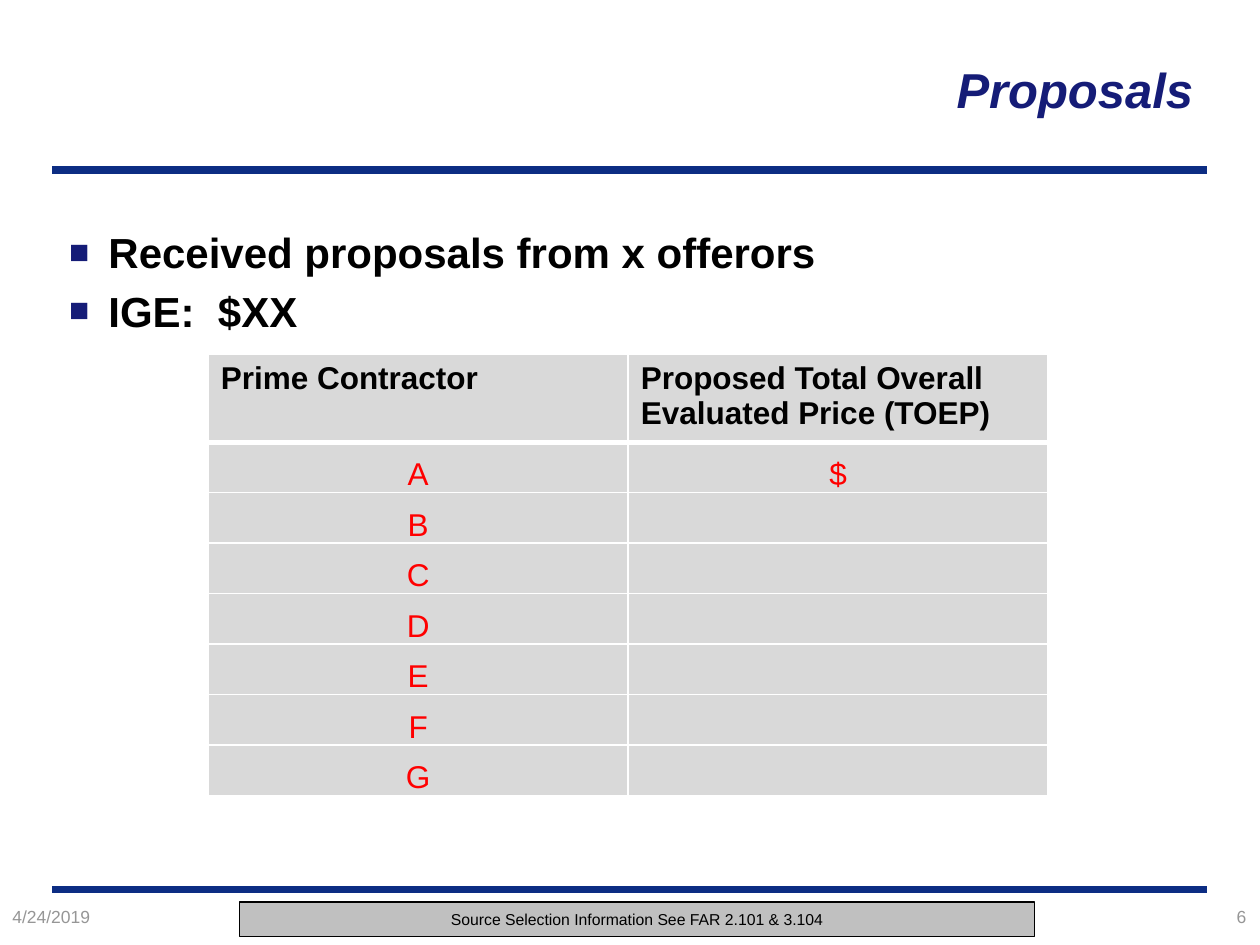
import pptx
import pptx.dml.color
import pptx.enum.shapes
import pptx.enum.text
import pptx.oxml
import pptx.oxml.ns
import pptx.util

Pt = pptx.util.Pt
RGBColor = pptx.dml.color.RGBColor
ALIGN = pptx.enum.text.PP_ALIGN
ANCHOR = pptx.enum.text.MSO_ANCHOR

FONT = "Arial"
NAVY = RGBColor(0x15, 0x1C, 0x77)
BLUE = RGBColor(0x0C, 0x2D, 0x83)
BLACK = RGBColor(0, 0, 0)
WHITE = RGBColor(255, 255, 255)
RED = RGBColor(255, 0, 0)
SILVER = RGBColor(0xC0, 0xC0, 0xC0)
PALE = RGBColor(0xD9, 0xD9, 0xD9)
GRAY = RGBColor(0x96, 0x96, 0x96)

HEADS = ("Prime Contractor", "Proposed Total Overall Evaluated Price (TOEP)")
PRICES = {"A": "$", "B": "", "C": "", "D": "", "E": "", "F": "", "G": ""}


def add_xml(parent, text):
    space = pptx.oxml.ns.nsdecls("a")
    parent.append(pptx.oxml.parse_xml(text.replace(">", f" {space}>", 1)))


def style(para, size, color, align=ALIGN.LEFT, bold=False, italic=False):
    para.alignment = align
    for run in para.runs:
        font = run.font
        font.name, font.size = FONT, Pt(size)
        font.bold, font.italic = bold, italic
        font.color.rgb = color


def add_title(slide, text):
    title = slide.shapes.title
    title.left, title.top = Pt(131), Pt(6)
    title.width, title.height = Pt(558), Pt(90)
    frame = title.text_frame
    frame.text = text
    frame.vertical_anchor = ANCHOR.MIDDLE
    style(frame.paragraphs[0], 28, NAVY, ALIGN.RIGHT, bold=True, italic=True)


def add_rule(slide, y):
    rule = slide.shapes.add_connector(
        pptx.enum.shapes.MSO_CONNECTOR.STRAIGHT, Pt(30), Pt(y), Pt(690), Pt(y))
    rule.line.color.rgb = BLUE
    rule.line.width = Pt(4.5)
    add_xml(rule._element.spPr, "<a:effectLst></a:effectLst>")


def add_text(slide, text, left, top, width, height):
    box = slide.shapes.add_textbox(Pt(left), Pt(top), Pt(width), Pt(height))
    frame = box.text_frame
    frame.word_wrap = True
    frame.text = text
    return frame


def add_bullets(slide, lines):
    frame = add_text(slide, "\n".join(lines), 32.4, 121, 653, 340.6)
    frame.margin_top = Pt(8.4)
    for index, para in enumerate(frame.paragraphs):
        props = para._p.get_or_add_pPr()
        props.set("marL", str(Pt(22.5)))
        props.set("indent", str(-Pt(22.5)))
        para.space_before = Pt(4.8 if index else 0)
        add_xml(props, f'<a:buClr><a:srgbClr val="{NAVY}"/></a:buClr>')
        add_xml(props, '<a:buSzPct val="80000"></a:buSzPct>')
        add_xml(props, f'<a:buFont typeface="{FONT}"></a:buFont>')
        add_xml(props, '<a:buChar char="■"></a:buChar>')
        style(para, 24, BLACK, bold=True)


def add_notice(slide, text):
    box = slide.shapes.add_shape(
        pptx.enum.shapes.MSO_SHAPE.RECTANGLE, Pt(136.8), Pt(515.5), Pt(454.3), Pt(19.5))
    box.shadow.inherit = False
    box.fill.solid()
    box.fill.fore_color.rgb = SILVER
    box.line.color.rgb = BLACK
    box.line.width = Pt(0.75)
    frame = box.text_frame
    frame.text = text
    frame.vertical_anchor = ANCHOR.MIDDLE
    style(frame.paragraphs[0], 9, BLACK, ALIGN.CENTER)


def add_edges(cell, head):
    """Draw white borders, heavier wherever the head row meets the body."""
    props = cell._tc.get_or_add_tcPr()
    widths = {"lnL": 1, "lnR": 1, "lnT": 1, "lnB": 3 if head else 1}
    for tag, width in widths.items():
        add_xml(props, f'<a:{tag} w="{Pt(width)}"><a:solidFill>'
                       f'<a:srgbClr val="{WHITE}"/></a:solidFill></a:{tag}>')


def fill_cell(cell, text, head):
    add_edges(cell, head)
    cell.fill.solid()
    cell.fill.fore_color.rgb = PALE
    cell.text = text
    para = cell.text_frame.paragraphs[0]
    if head:
        style(para, 18, BLACK, bold=True)
    elif text:
        cell.vertical_anchor = ANCHOR.BOTTOM
        cell.margin_left = cell.margin_right = cell.margin_top = Pt(0.75)
        cell.margin_bottom = Pt(0)
        style(para, 18, RED, ALIGN.CENTER)


def add_prices(slide):
    rows = [HEADS, *PRICES.items()]
    frame = slide.shapes.add_table(
        len(rows), len(HEADS), Pt(119), Pt(202.5), Pt(480), Pt(247.2))
    table = frame.table
    table.horz_banding = False
    for r, row in enumerate(rows):
        table.rows[r].height = Pt(28.6 if r else 47)
        for c, text in enumerate(row):
            fill_cell(table.cell(r, c), text, head=r == 0)


def main():
    deck = pptx.Presentation()
    deck.slide_width, deck.slide_height = Pt(720), Pt(540)
    slide = deck.slides.add_slide(deck.slide_layouts[5])
    for y in (508.3, 97.2):
        add_rule(slide, y)
    add_notice(slide, "Source Selection Information See FAR 2.101 & 3.104")
    add_title(slide, "Proposals")
    add_bullets(slide, ("Received proposals from x offerors", "IGE:  $XX"))
    date = add_text(slide, "4/24/2019", 0, 514, 96, 24)
    style(date.paragraphs[0], 10, GRAY)
    number = add_text(slide, "6", 629.3, 514, 90, 24)
    style(number.paragraphs[0], 10, GRAY, ALIGN.RIGHT)
    add_prices(slide)
    deck.save("out.pptx")


if __name__ == "__main__":
    main()
